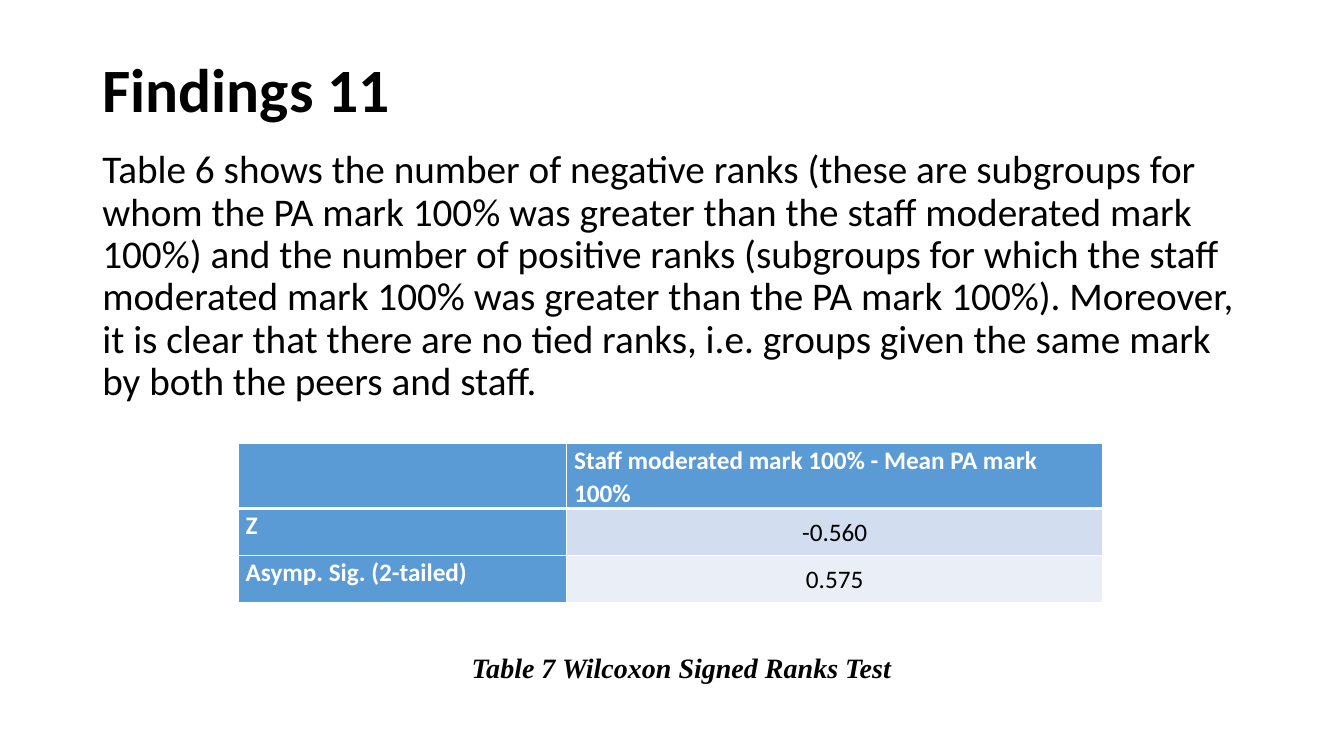
from dataclasses import dataclass

import pptx
import pptx.dml.color
import pptx.enum.text
import pptx.oxml.ns
import pptx.util
from lxml import etree
from pptx.util import Cm, Pt

ALIGN = pptx.enum.text.PP_ALIGN
ANCHOR = pptx.enum.text.MSO_ANCHOR
BLACK, WHITE = "000000", "FFFFFF"
HEADER_BLUE, BAND_DARK, BAND_LIGHT = "5B9BD5", "D2DEEF", "EAEFF7"


@dataclass
class Style:
    size: float
    font: str = "Calibri"
    color: str = BLACK
    bold: bool = False
    italic: bool = False


@dataclass
class TableCell:
    text: str
    fill: str
    is_value: bool = False


def rgb(value: str) -> pptx.dml.color.RGBColor:
    return pptx.dml.color.RGBColor.from_string(value)


def place(shape, left: float, top: float, width: float, height: float) -> None:
    shape.left, shape.top = Cm(left), Cm(top)
    shape.width, shape.height = Cm(width), Cm(height)


def write(frame, text: str, style: Style, align=ALIGN.LEFT, spacing: float = 1.0):
    """Add one styled run to the first paragraph and return the paragraph."""
    para = frame.paragraphs[0]
    para.alignment, para.line_spacing = align, spacing
    span = para.add_run()
    span.text = text
    span.font.name, span.font.size = style.font, Pt(style.size)
    span.font.bold, span.font.italic = style.bold, style.italic
    span.font.color.rgb = rgb(style.color)
    return para


def add_text(page, left: float, top: float, width: float, height: float):
    frame = page.shapes.add_textbox(Cm(left), Cm(top), Cm(width), Cm(height)).text_frame
    frame.word_wrap = True
    return frame


def set_borders(cell, bottom_width: float) -> None:
    properties = cell._tc.get_or_add_tcPr()
    for side, width in (("L", 1), ("R", 1), ("T", 1), ("B", bottom_width)):
        line = etree.SubElement(properties, pptx.oxml.ns.qn(f"a:ln{side}"), w=str(Pt(width)))
        fill = etree.SubElement(line, pptx.oxml.ns.qn("a:solidFill"))
        etree.SubElement(fill, pptx.oxml.ns.qn("a:srgbClr"), val=WHITE)


def add_results_table(page, rows: list[list[TableCell]]) -> None:
    column_widths, row_height = (8.28, 13.51), 1.19
    table = page.shapes.add_table(
        len(rows), len(column_widths), Cm(6), Cm(11.18),
        Cm(sum(column_widths)), Cm(row_height * len(rows)),
    ).table
    for column, width in zip(table.columns, column_widths):
        column.width = Cm(width)
    for row_index, row in enumerate(rows):
        table.rows[row_index].height = Cm(row_height)
        for column_index, entry in enumerate(row):
            cell = table.cell(row_index, column_index)
            set_borders(cell, 3 if row_index == 0 else 1)
            cell.fill.solid()
            cell.fill.fore_color.rgb = rgb(entry.fill)
            cell.margin_left = cell.margin_right = Cm(0.19)
            cell.margin_top = cell.margin_bottom = 0
            cell.vertical_anchor = ANCHOR.MIDDLE if entry.is_value else ANCHOR.TOP
            if entry.text:
                style = Style(18) if entry.is_value else Style(18, color=WHITE, bold=True)
                align = ALIGN.CENTER if entry.is_value else ALIGN.LEFT
                write(cell.text_frame, entry.text, style, align, 1.07)


def main() -> None:
    deck = pptx.Presentation()
    deck.slide_width, deck.slide_height = Cm(33.87), Cm(19.05)
    page = deck.slides.add_slide(deck.slide_layouts[5])

    # Title
    title = page.shapes.title
    place(title, 2.33, 1.01, 29.21, 2.65)
    title.text_frame.vertical_anchor = ANCHOR.MIDDLE
    write(title.text_frame, "Findings 11", Style(44, bold=True), spacing=0.9)

    # Explanation
    body = add_text(page, 2.33, 3.65, 29.21, 6.9)
    para = write(
        body,
        "Table 6 shows the number of negative ranks (these are subgroups for whom "
        "the PA mark 100% was greater than the staff moderated mark 100%) and the "
        "number of positive ranks (subgroups for which the staff moderated mark 100% "
        "was greater than the PA mark 100%). Moreover, it is clear that there are no "
        "tied ranks, i.e. groups given the same mark by both the peers and staff.",
        Style(28), spacing=0.9,
    )
    para.space_before = Pt(10)

    # Test results
    add_results_table(page, [
        [TableCell("", HEADER_BLUE),
         TableCell("Staff moderated mark 100% - Mean PA mark 100%", HEADER_BLUE)],
        [TableCell("Z", HEADER_BLUE), TableCell("-0.560", BAND_DARK, True)],
        [TableCell("Asymp. Sig. (2-tailed)", HEADER_BLUE), TableCell("0.575", BAND_LIGHT, True)],
    ])

    # Caption
    caption = add_text(page, 11.18, 16.26, 11.99, 1.11)
    caption.auto_size = pptx.enum.text.MSO_AUTO_SIZE.SHAPE_TO_FIT_TEXT
    caption_style = Style(20, "Times New Roman", bold=True, italic=True)
    para = write(caption, "Table 7 Wilcoxon Signed Ranks Test", caption_style, ALIGN.CENTER)
    para.space_after = Pt(10)

    deck.save("out.pptx")


if __name__ == "__main__":
    main()
